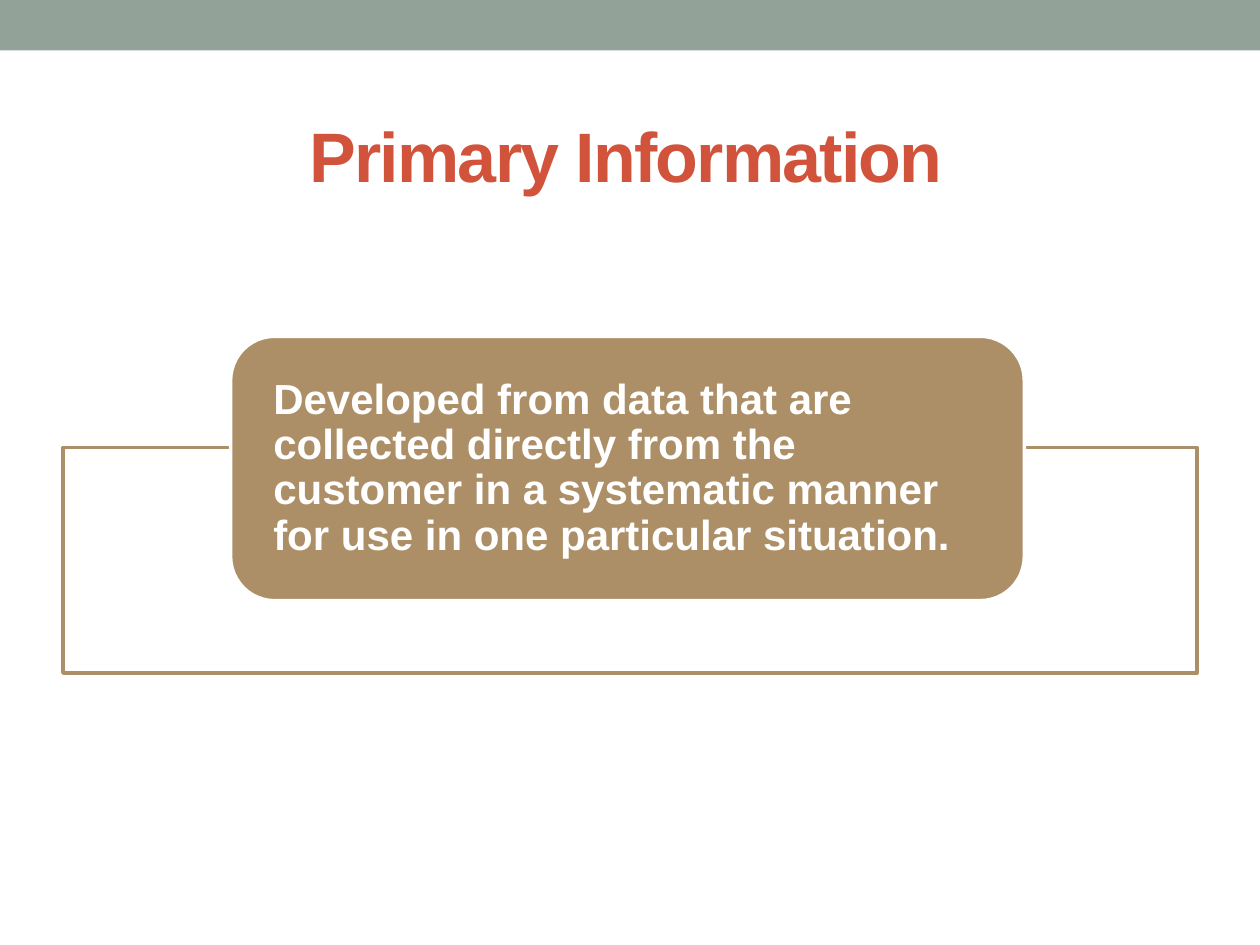
"""Build the Primary Information slide with a framed definition."""
from dataclasses import dataclass, field
from typing import Any, Optional

from lxml import etree
from pptx import Presentation
from pptx import util as u
from pptx.dml.color import RGBColor
from pptx.enum import shapes, text
from pptx.oxml import ns

SAGE = RGBColor(0x93, 0xA2, 0x99)
RED = RGBColor(0xD2, 0x53, 0x3C)
TAN = RGBColor(0xAD, 0x8F, 0x67)
WHITE = RGBColor(0xFF, 0xFF, 0xFF)


@dataclass
class Panel:
    kind: shapes.MSO_SHAPE
    left: float
    top: float
    width: float
    height: float
    fill: Optional[RGBColor] = None
    line: Optional[RGBColor] = None
    opacity: int = 100


@dataclass
class Label:
    wording: str
    size: int
    color: RGBColor
    spacing: int = 0
    frame_format: dict[str, Any] = field(default_factory=dict)
    paragraph_format: dict[str, Any] = field(default_factory=dict)


def apply_format(target: Any, values: dict[str, Any]) -> None:
    for name, value in values.items():
        setattr(target, name, value)


def draw_panel(slide: Any, panel: Panel) -> Any:
    bounds = [u.Cm(value) for value in (panel.left, panel.top, panel.width, panel.height)]
    shape = slide.shapes.add_shape(panel.kind, *bounds)
    shape.shadow.inherit = False
    if panel.fill is None:
        shape.fill.background()
    else:
        shape.fill.solid()
        shape.fill.fore_color.rgb = panel.fill
    if panel.opacity < 100:
        color = shape.fill._xPr.find(f".//{ns.qn('a:srgbClr')}")
        etree.SubElement(color, ns.qn("a:alpha"), val=str(panel.opacity * 1000))
    if panel.line is None:
        shape.line.fill.background()
    else:
        shape.line.color.rgb = panel.line
        shape.line.width = u.Cm(0.07)
    return shape


def write_label(shape: Any, label: Label) -> None:
    frame = shape.text_frame
    apply_format(frame, {"word_wrap": True, "vertical_anchor": text.MSO_ANCHOR.MIDDLE,
                         **label.frame_format})
    paragraph = frame.paragraphs[0]
    apply_format(paragraph, label.paragraph_format)
    run = paragraph.add_run()
    run.text = label.wording
    apply_format(run.font, {"name": "Arial", "size": u.Pt(label.size), "bold": True})
    run.font.color.rgb = label.color
    if label.spacing:
        run.font._element.set("spc", str(label.spacing))


def main() -> None:
    presentation = Presentation()
    apply_format(presentation, {"slide_width": u.Cm(25.4), "slide_height": u.Cm(19.05)})
    slide = presentation.slides.add_slide(presentation.slide_layouts[6])

    rectangle = shapes.MSO_SHAPE.RECTANGLE
    draw_panel(slide, Panel(rectangle, 0, 0, 25.4, 1.02, SAGE))

    title = slide.shapes.add_textbox(u.Cm(1.19), u.Cm(1.9), u.Cm(22.86), u.Cm(2.41))
    write_label(title, Label("Primary Information", 40, RED, -100,
                             paragraph_format={"alignment": text.PP_ALIGN.CENTER}))

    draw_panel(slide, Panel(rectangle, 1.27, 9.02, 22.86, 4.55, WHITE, TAN, 90))
    definition = draw_panel(slide, Panel(shapes.MSO_SHAPE.ROUNDED_RECTANGLE,
                                         4.65, 6.78, 16, 5.33, TAN, WHITE))
    write_label(definition, Label(
        "Developed from data that are collected directly from the customer "
        "in a systematic manner for use in one particular situation.",
        24, WHITE,
        frame_format={"margin_left": u.Cm(0.6), "margin_right": u.Cm(0.6),
                      "margin_top": 0, "margin_bottom": 0},
        paragraph_format={"alignment": text.PP_ALIGN.LEFT, "line_spacing": 0.9}))

    presentation.save("out.pptx")


if __name__ == "__main__":
    main()
